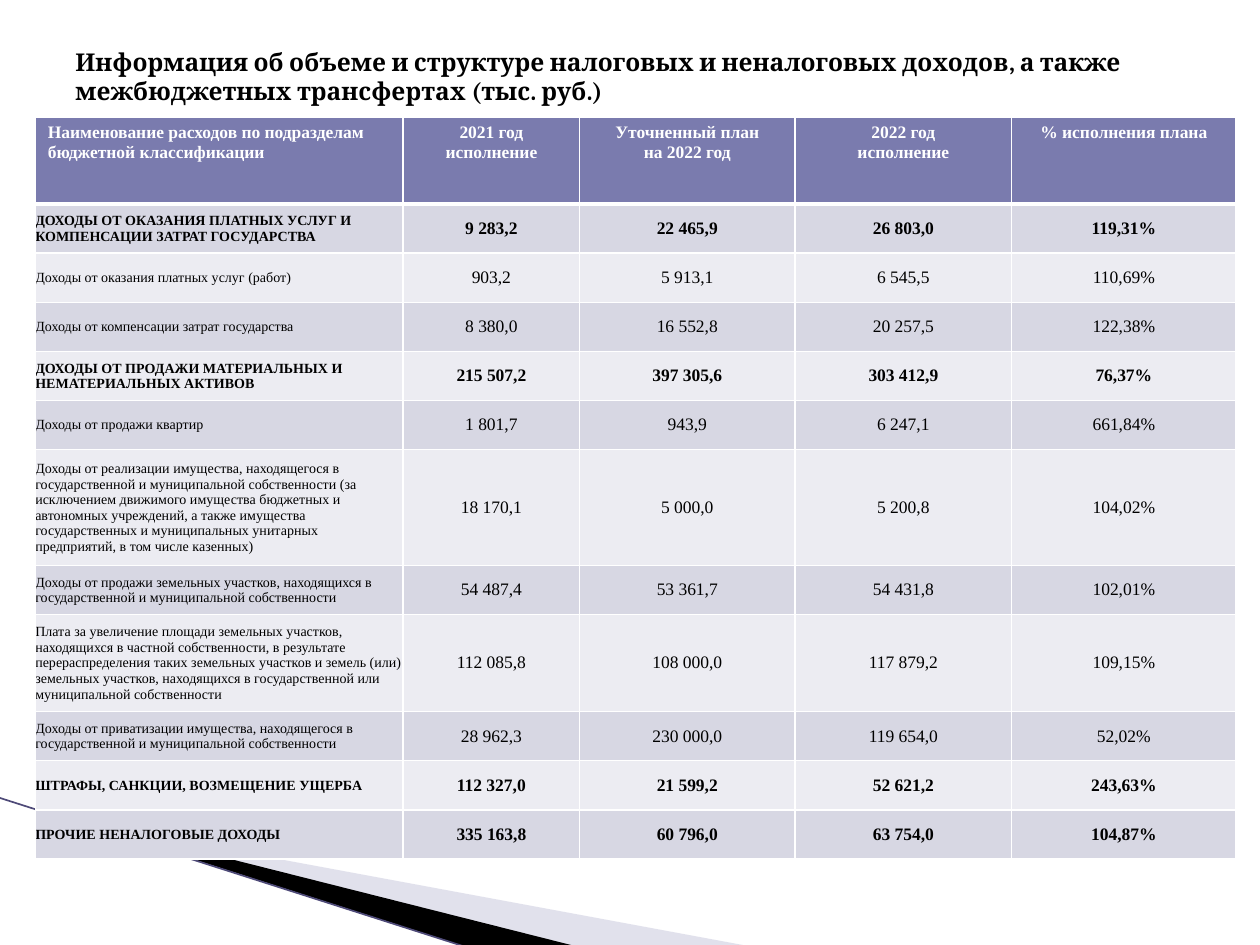
"""Build the slide on non-tax revenue and its plan fulfilment."""
from lxml import etree
from pptx import Presentation
from pptx import util as u
from pptx.dml.color import RGBColor
from pptx.enum import shapes, text
from pptx.oxml import ns

WHITE = RGBColor(0xFF, 0xFF, 0xFF)
BLACK = RGBColor(0, 0, 0)
HEADER = RGBColor(0x7A, 0x7B, 0xAE)
BANDS = [RGBColor(0xD7, 0xD7, 0xE3), RGBColor(0xEC, 0xEC, 0xF2)]
LAVENDER = RGBColor(0xB6, 0xB6, 0xD1)
VIOLET = RGBColor(0x4E, 0x4A, 0x78)

TITLE = ("Информация об объеме и структуре налоговых и неналоговых доходов, "
         "а также межбюджетных трансфертах (тыс. руб.)")
HEADINGS = [
    "Наименование расходов по подразделам бюджетной классификации",
    "2021 год\nисполнение",
    "Уточненный план\nна 2022 год",
    "2022 год\nисполнение",
    "% исполнения плана",
]
REVENUES = [
    ("ДОХОДЫ ОТ ОКАЗАНИЯ ПЛАТНЫХ УСЛУГ И КОМПЕНСАЦИИ ЗАТРАТ ГОСУДАРСТВА",
     "9 283,2", "22 465,9", "26 803,0", "119,31%"),
    ("Доходы от оказания платных услуг (работ)",
     "903,2", "5 913,1", "6 545,5", "110,69%"),
    ("Доходы от компенсации затрат государства",
     "8 380,0", "16 552,8", "20 257,5", "122,38%"),
    ("ДОХОДЫ ОТ ПРОДАЖИ МАТЕРИАЛЬНЫХ И НЕМАТЕРИАЛЬНЫХ АКТИВОВ",
     "215 507,2", "397 305,6", "303 412,9", "76,37%"),
    ("Доходы от продажи квартир",
     "1 801,7", "943,9", "6 247,1", "661,84%"),
    ("Доходы от реализации имущества, находящегося в государственной и "
     "муниципальной собственности (за исключением движимого имущества "
     "бюджетных и автономных учреждений, а также имущества государственных "
     "и муниципальных унитарных предприятий, в том числе казенных)",
     "18 170,1", "5 000,0", "5 200,8", "104,02%"),
    ("Доходы от продажи земельных участков, находящихся в государственной "
     "и муниципальной собственности",
     "54 487,4", "53 361,7", "54 431,8", "102,01%"),
    ("Плата за увеличение площади земельных участков, находящихся в частной "
     "собственности, в результате перераспределения таких земельных участков "
     "и земель (или) земельных участков, находящихся в государственной или "
     "муниципальной собственности",
     "112 085,8", "108 000,0", "117 879,2", "109,15%"),
    ("Доходы от приватизации имущества, находящегося в государственной и "
     "муниципальной собственности",
     "28 962,3", "230 000,0", "119 654,0", "52,02%"),
    ("ШТРАФЫ, САНКЦИИ, ВОЗМЕЩЕНИЕ УЩЕРБА",
     "112 327,0", "21 599,2", "52 621,2", "243,63%"),
    ("ПРОЧИЕ НЕНАЛОГОВЫЕ ДОХОДЫ",
     "335 163,8", "60 796,0", "63 754,0", "104,87%"),
]
COLUMN_WIDTHS = [2.92, 1.4, 1.71, 1.72, 1.78]
HEADER_HEIGHT, ROW_HEIGHT = 0.69, 0.39
TALL_ROWS = {6: 0.92, 8: 0.77}
RIBBONS = [
    ([(0.55, 6.51), (5.95, 7.51), (4.56, 7.51), (0.55, 6.5)], LAVENDER, 40),
    ([(0.53, 6.49), (4.57, 7.51), (3.72, 7.52), (0.54, 6.5)], BLACK, 100),
]


def add_ribbon(slide, points, color, opacity):
    corners = [(u.Inches(x), u.Inches(y)) for x, y in points]
    builder = slide.shapes.build_freeform(*corners[0])
    builder.add_line_segments(corners[1:])
    ribbon = builder.convert_to_shape()
    ribbon.shadow.inherit = False
    ribbon.line.fill.background()
    ribbon.fill.solid()
    ribbon.fill.fore_color.rgb = color
    if opacity < 100:
        tint = ribbon.fill._xPr.find(".//" + ns.qn("a:srgbClr"))
        etree.SubElement(tint, ns.qn("a:alpha"), val=str(opacity * 1000))


def add_edge_line(slide):
    edge = slide.shapes.add_connector(
        shapes.MSO_CONNECTOR.STRAIGHT, u.Inches(-0.01), u.Inches(6.33),
        u.Inches(3.71), u.Inches(7.52))
    edge.line.color.rgb = VIOLET
    edge.line.width = u.Pt(0.95)
    etree.SubElement(edge._element.spPr, ns.qn("a:effectLst"))


def set_borders(cell, bottom):
    for side, points in zip("LRTB", (1, 1, 1, bottom)):
        border = etree.SubElement(cell._tc.get_or_add_tcPr(), ns.qn("a:ln" + side),
                                  w=str(u.Pt(points)))
        fill = etree.SubElement(border, ns.qn("a:solidFill"))
        etree.SubElement(fill, ns.qn("a:srgbClr"), val=str(WHITE))


def fill_cell(cell, content, row, column, bold):
    is_header = row == 0
    set_borders(cell, 3 if is_header else 1)
    cell.fill.solid()
    cell.fill.fore_color.rgb = HEADER if is_header else BANDS[(row - 1) % 2]
    if not is_header:
        cell.vertical_anchor = text.MSO_ANCHOR.MIDDLE
        cell.margin_left = cell.margin_right = cell.margin_top = cell.margin_bottom = 0
    cell.text_frame.text = content
    for paragraph in cell.text_frame.paragraphs:
        paragraph.alignment = text.PP_ALIGN.CENTER if column else text.PP_ALIGN.LEFT
        font = paragraph.runs[0].font
        font.name = "Times New Roman"
        font.size = u.Pt(10 if is_header or column else 8)
        font.bold = bold
        font.color.rgb = WHITE if is_header else BLACK


def add_revenue_table(slide):
    rows = [HEADINGS, *REVENUES]
    heights = [HEADER_HEIGHT] + [TALL_ROWS.get(n, ROW_HEIGHT) for n in range(1, len(rows))]
    table = slide.shapes.add_table(
        len(rows), len(HEADINGS), u.Inches(0.28), u.Inches(0.93),
        u.Inches(sum(COLUMN_WIDTHS)), u.Inches(sum(heights))).table
    for column, width in zip(table.columns, COLUMN_WIDTHS):
        column.width = u.Inches(width)
    for r, (values, height) in enumerate(zip(rows, heights)):
        table.rows[r].height = u.Inches(height)
        bold = r == 0 or values[0].isupper()
        for c, value in enumerate(values):
            fill_cell(table.cell(r, c), value, r, c, bold)


def add_title(slide):
    title = slide.shapes.add_textbox(
        u.Inches(0.5), u.Inches(0.3), u.Inches(9), u.Inches(0.61)).text_frame
    title.word_wrap = True
    title.vertical_anchor = text.MSO_ANCHOR.MIDDLE
    title.text = TITLE
    font = title.paragraphs[0].runs[0].font
    font.name, font.size, font.bold = "Cambria", u.Pt(14), True
    font.color.rgb = BLACK


def main():
    deck = Presentation()
    deck.slide_width, deck.slide_height = u.Inches(10), u.Inches(7.5)
    slide = deck.slides.add_slide(deck.slide_layouts[6])
    for points, color, opacity in RIBBONS:
        add_ribbon(slide, points, color, opacity)
    add_edge_line(slide)
    add_revenue_table(slide)
    add_title(slide)
    deck.save("out.pptx")


if __name__ == "__main__":
    main()
